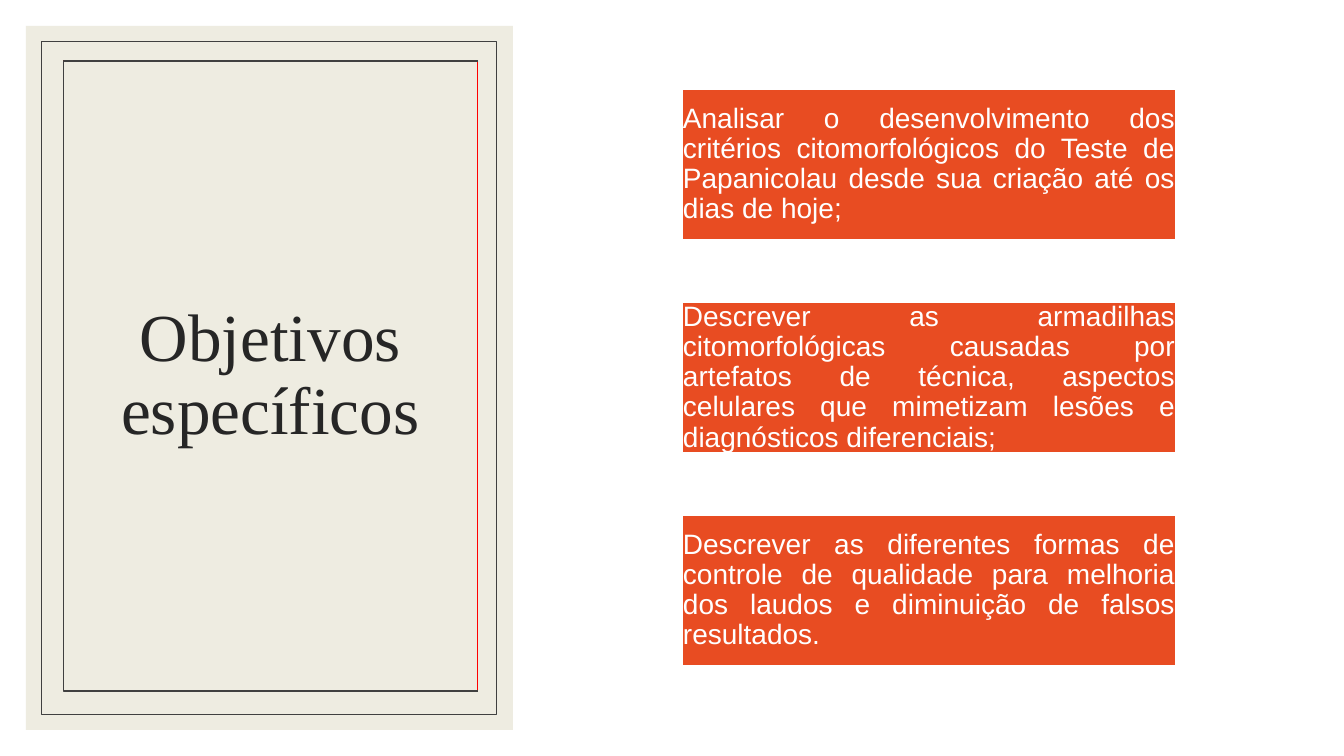
"""Build the slide of specific objectives."""
from pptx import Presentation
from pptx.dml.color import RGBColor
from pptx.enum.shapes import MSO_SHAPE
from pptx.enum.text import MSO_ANCHOR, MSO_AUTO_SIZE, PP_ALIGN
from pptx.util import Pt

WHITE = RGBColor(0xFF, 0xFF, 0xFF)
CREAM = RGBColor(0xEE, 0xEC, 0xE1)
RED = RGBColor(0xFF, 0x00, 0x00)
DARK = RGBColor(0x40, 0x40, 0x40)
INK = RGBColor(0x26, 0x26, 0x26)
ORANGE = RGBColor(0xE8, 0x4C, 0x22)
WIDE, HIGH = 1344, 756
SCALE = 12192000 / WIDE


def px(*sizes):
    """Turn px into EMU."""
    return [round(size * SCALE) for size in sizes]


def write(shape, text, font, size, color, align, inset):
    """Put formatted text in a shape."""
    frame = shape.text_frame
    frame.text = text
    frame.word_wrap = True
    frame.auto_size = MSO_AUTO_SIZE.NONE
    frame.vertical_anchor = MSO_ANCHOR.MIDDLE
    frame.margin_left, frame.margin_top, frame.margin_right, frame.margin_bottom = px(*inset)
    line = frame.paragraphs[0]
    line.alignment = align
    line.line_spacing = 0.9
    run = line.runs[0].font
    run.name, run.size, run.color.rgb = font, Pt(size), color


deck = Presentation()
deck.slide_width, deck.slide_height = px(WIDE, HIGH)
slide = deck.slides.add_slide(deck.slide_layouts[5])
shapes = slide.shapes

panel = shapes.add_shape(MSO_SHAPE.RECTANGLE, *px(26, 26, 487, 704))
panel.shadow.inherit = False
panel.fill.solid()
panel.fill.fore_color.rgb = CREAM
panel.line.fill.background()

title = shapes.title
title.left, title.top, title.width, title.height = px(63, 61, 415, 630)
title.line.color.rgb = RED
title.line.width = Pt(0.75)
write(title, "Objetivos específicos", font="Times New Roman", size=48,
      color=INK, align=PP_ALIGN.CENTER, inset=(10, 5, 10, 5))
panel._element.addnext(title._element)

path = shapes.build_freeform(*px(478, 61), scale=1.0)
path.add_line_segments([px(63, 61), px(63, 691), px(478, 691)], close=False)
edge = path.convert_to_shape()
border = shapes.add_shape(MSO_SHAPE.RECTANGLE, *px(41, 41, 455, 673))
for shape, width in ((edge, 0.75), (border, 0.5)):
    shape.shadow.inherit = False
    shape.fill.background()
    shape.line.color.rgb = DARK
    shape.line.width = Pt(width)

goals = [
    "Analisar o desenvolvimento dos critérios citomorfológicos do Teste de "
    "Papanicolau desde sua criação até os dias de hoje;",
    "Descrever as armadilhas citomorfológicas causadas por artefatos de técnica, "
    "aspectos celulares que mimetizam lesões e diagnósticos diferenciais;",
    "Descrever as diferentes formas de controle de qualidade para melhoria dos "
    "laudos e diminuição de falsos resultados.",
]
for row, goal in enumerate(goals):
    box = shapes.add_shape(MSO_SHAPE.RECTANGLE, *px(682, 89 + 213 * row, 494, 151))
    box.shadow.inherit = False
    box.fill.solid()
    box.fill.fore_color.rgb = ORANGE
    box.line.color.rgb = WHITE
    box.line.width = Pt(1)
    write(box, goal, font="Arial", size=20, color=WHITE,
          align=PP_ALIGN.JUSTIFY, inset=(1, 1, 1, 1))

deck.save("out.pptx")
